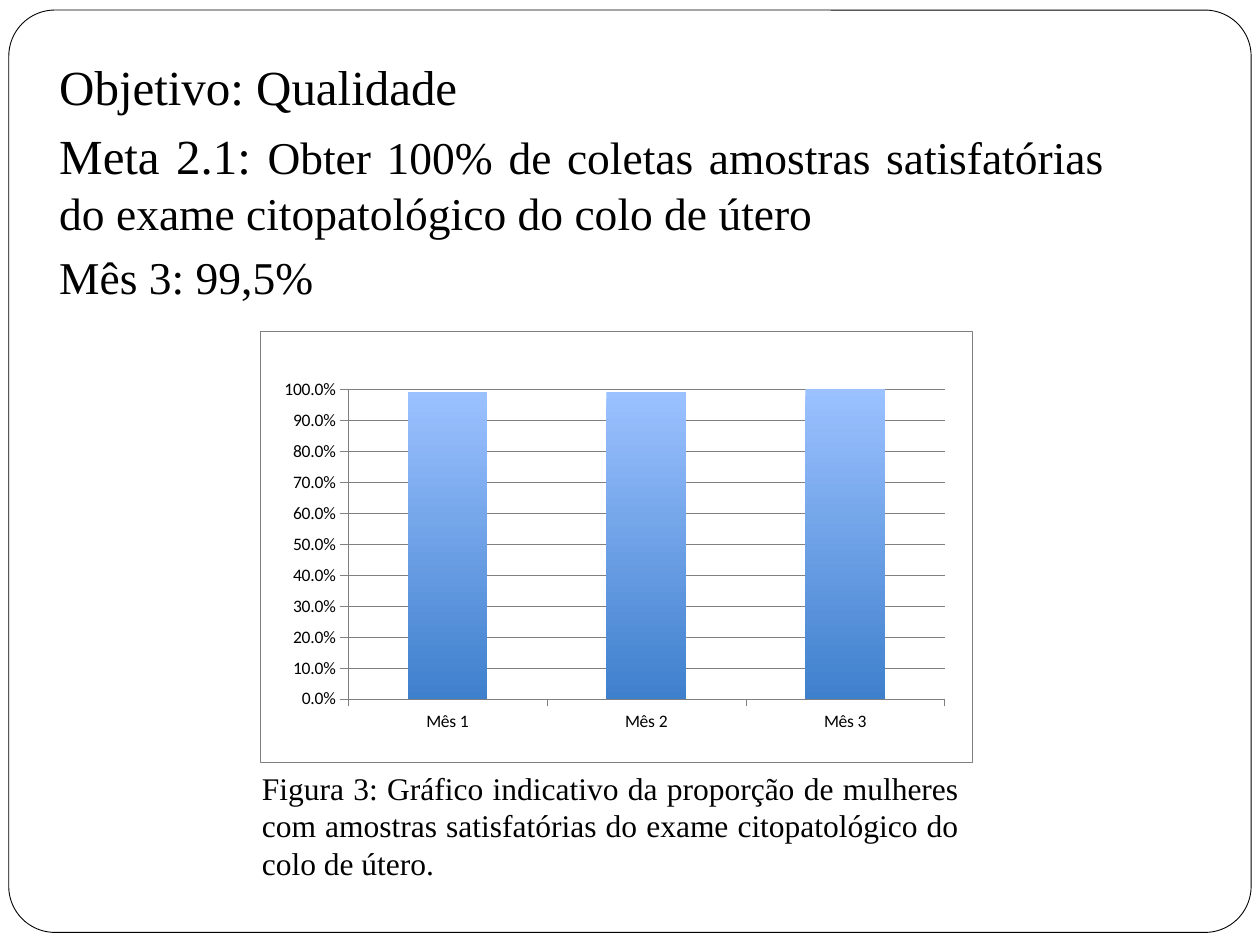
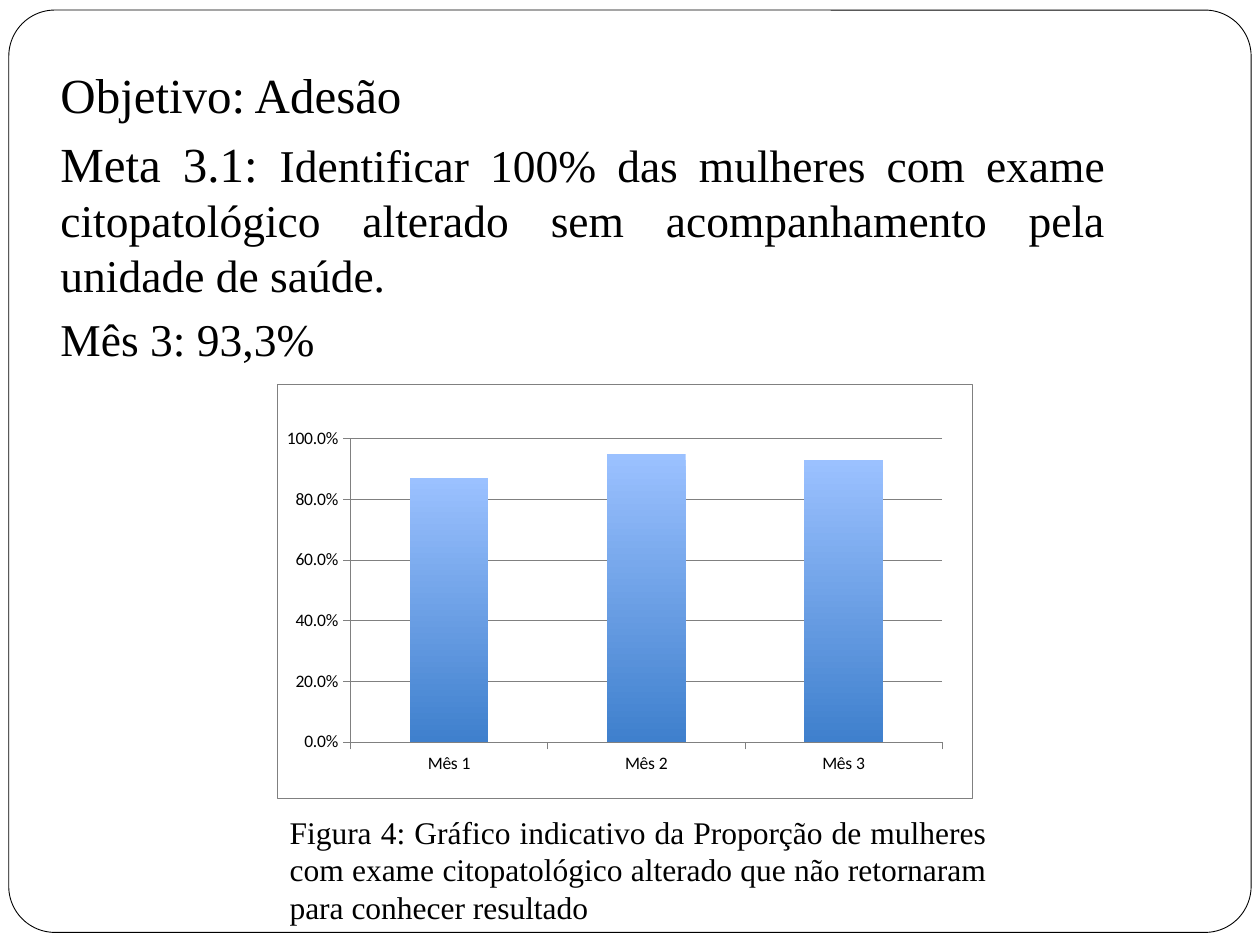
from lxml.etree import SubElement
from pptx import Presentation
from pptx.chart.data import CategoryChartData
from pptx.dml.color import RGBColor
from pptx.enum.chart import XL_CHART_TYPE, XL_TICK_MARK
from pptx.enum.shapes import MSO_SHAPE
from pptx.enum.text import MSO_ANCHOR, MSO_AUTO_SIZE, PP_ALIGN
from pptx.oxml import parse_xml
from pptx.oxml.ns import nsdecls, qn
from pptx.util import Inches, Pt

COLORS = {
    "paper": "FFFFFF",
    "ink": "000000",
    "axis": "808080",
    "bar_top": "9BC1FF",
    "bar_bottom": "3F80CD",
}
TEXT_FONT = "Times New Roman"
CHART_FONT = "Calibri"
MONTHS = ["Mês 1", "Mês 2", "Mês 3"]
PERCENT = "0.0%"

FRAME_BOX = (0.07, 0.08, 9.86, 7.32)
BODY_FRAME = {
    "word_wrap": True,
    "auto_size": MSO_AUTO_SIZE.NONE,
    "vertical_anchor": MSO_ANCHOR.TOP,
}
CAPTION_FRAME = {"word_wrap": True, "auto_size": MSO_AUTO_SIZE.NONE}
BODY_PARAGRAPH = {
    "alignment": PP_ALIGN.JUSTIFY,
    "space_before": Pt(5.8),
    "line_spacing": 1.0,
}
CAPTION_PARAGRAPH = {"alignment": PP_ALIGN.JUSTIFY}

INDICATORS = [
    {
        "body_box": (0.37, 0.4, 8.5, 5),
        "paragraphs": [
            [("Objetivo: Qualidade", 28)],
            [
                ("Meta 2.1: ", 28),
                ("Obter 100% de coletas amostras satisfatórias do exame "
                 "citopatológico do colo de útero", 26),
            ],
            [("Mês 3: 99,5%", 26)],
        ],
        "chart_box": (2.06, 2.63, 5.66, 3.42),
        "plot_box": (0.7, 0.46, 4.74, 2.46),
        "values": (0.99, 0.99, 1),
        "major_unit": 0.1,
        "caption_box": (1.98, 6.05, 5.73, 1.31),
        "caption": "Figura 3: Gráfico indicativo da proporção de mulheres com "
                   "amostras satisfatórias do exame citopatológico do colo de útero.",
    },
    {
        "body_box": (0.38, 0.46, 8.5, 5),
        "paragraphs": [
            [("Objetivo: Adesão", 28)],
            [
                ("Meta 3.1: ", 28),
                ("Identificar 100% das mulheres com exame citopatológico "
                 "alterado sem acompanhamento pela unidade de saúde.", 26),
            ],
            [("Mês 3: 93,3%", 26)],
        ],
        "chart_box": (2.2, 3.05, 5.52, 3.29),
        "plot_box": (0.58, 0.43, 4.7, 2.41),
        "values": (0.87, 0.95, 0.93),
        "major_unit": 0.2,
        "caption_box": (2.2, 6.4, 5.73, 1.01),
        "caption": "Figura 4: Gráfico indicativo da Proporção de mulheres com "
                   "exame citopatológico alterado que não retornaram para "
                   "conhecer resultado",
    },
]


def color(name):
    return RGBColor.from_string(COLORS[name])


def inches(box):
    return [Inches(length) for length in box]


def apply_format(target, values):
    for name, value in values.items():
        setattr(target, name, value)


def format_font(font, name, size):
    apply_format(font, {"name": name, "size": Pt(size)})
    font.color.rgb = color("ink")


def format_line(line, name, width):
    line.color.rgb = color(name)
    line.width = Pt(width)


def add_frame(slide):
    frame = slide.shapes.add_shape(MSO_SHAPE.ROUNDED_RECTANGLE, *inches(FRAME_BOX))
    frame.adjustments[0] = 0.05
    frame.shadow.inherit = False
    frame.fill.solid()
    frame.fill.fore_color.rgb = color("paper")
    format_line(frame.line, "ink", 0.5)
    return frame


def move_to_layout(shape, layout):
    layout.shapes.element.insert(2, shape.element)


def add_run(paragraph, text, size):
    run = paragraph.add_run()
    run.text = text
    format_font(run.font, TEXT_FONT, size)


def remove_bullet(paragraph):
    properties = paragraph._p.get_or_add_pPr()
    properties.set("marL", "0")
    properties.set("indent", "0")
    SubElement(properties, qn("a:buNone"))


def fill_body(slide, box, paragraphs):
    body = slide.placeholders[1]
    apply_format(body, dict(zip(("left", "top", "width", "height"), inches(box))))
    text_frame = body.text_frame
    apply_format(text_frame, BODY_FRAME)
    for index, runs in enumerate(paragraphs):
        paragraph = text_frame.add_paragraph() if index else text_frame.paragraphs[0]
        apply_format(paragraph, BODY_PARAGRAPH)
        remove_bullet(paragraph)
        for text, size in runs:
            add_run(paragraph, text, size)


def add_caption(slide, box, text):
    text_frame = slide.shapes.add_textbox(*inches(box)).text_frame
    apply_format(text_frame, CAPTION_FRAME)
    paragraph = text_frame.paragraphs[0]
    apply_format(paragraph, CAPTION_PARAGRAPH)
    add_run(paragraph, text, 18)


def area_properties(line):
    return parse_xml(
        f'<c:spPr {nsdecls("c", "a")}><a:solidFill>'
        f'<a:srgbClr val="{COLORS["paper"]}"/></a:solidFill>{line}</c:spPr>'
    )


def format_areas(chart, chart_box, plot_box):
    chart_element = chart.element.find(qn("c:chart"))
    border = (
        f'<a:ln w="{Pt(0.25)}"><a:solidFill>'
        f'<a:srgbClr val="{COLORS["axis"]}"/></a:solidFill></a:ln>'
    )
    chart_element.addnext(area_properties(border))
    plot_area = chart_element.find(qn("c:plotArea"))
    plot_area.append(area_properties("<a:ln><a:noFill/></a:ln>"))
    for layout in plot_area.findall(qn("c:layout")):
        plot_area.remove(layout)
    chart_size = chart_box[2:] * 2
    shares = [length / whole for length, whole in zip(plot_box, chart_size)]
    settings = [("layoutTarget", "inner"), ("xMode", "edge"), ("yMode", "edge")]
    settings += zip("xywh", shares)
    entries = "".join(f'<c:{name} val="{value}"/>' for name, value in settings)
    plot_area.insert(0, parse_xml(
        f'<c:layout {nsdecls("c")}><c:manualLayout>{entries}</c:manualLayout></c:layout>'
    ))


def format_axes(chart, major_unit):
    for axis in (chart.category_axis, chart.value_axis):
        axis.major_tick_mark = XL_TICK_MARK.OUTSIDE
        axis.minor_tick_mark = XL_TICK_MARK.NONE
        format_line(axis.format.line, "axis", 0.25)
        format_font(axis.tick_labels.font, CHART_FONT, 10)
    value_axis = chart.value_axis
    apply_format(value_axis, {
        "minimum_scale": 0,
        "maximum_scale": 1,
        "major_unit": major_unit,
        "has_major_gridlines": True,
    })
    format_line(value_axis.major_gridlines.format.line, "axis", 0.25)
    apply_format(value_axis.tick_labels, {
        "number_format": PERCENT,
        "number_format_is_linked": False,
    })


def format_bars(plot):
    apply_format(plot, {"gap_width": 150, "vary_by_categories": False})
    series = plot.series[0]
    series.invert_if_negative = False
    fill = series.format.fill
    fill.gradient()
    fill.gradient_angle = 270
    for position, (stop, name) in enumerate(zip(fill.gradient_stops, ("bar_top", "bar_bottom"))):
        stop.position = position
        stop.color.rgb = color(name)


def add_month_chart(slide, box, plot_box, values, major_unit):
    data = CategoryChartData(number_format=PERCENT)
    data.categories = MONTHS
    data.add_series("Series 1", values)
    chart = slide.shapes.add_chart(XL_CHART_TYPE.COLUMN_CLUSTERED, *inches(box), data).chart
    apply_format(chart, {"has_title": False, "has_legend": False})
    format_font(chart.font, CHART_FONT, 10)
    format_axes(chart, major_unit)
    format_bars(chart.plots[0])
    format_areas(chart, box, plot_box)


def add_indicator_slide(presentation, layout, indicator):
    slide = presentation.slides.add_slide(layout)
    title = slide.shapes.title.element
    title.getparent().remove(title)
    fill_body(slide, indicator["body_box"], indicator["paragraphs"])
    add_caption(slide, indicator["caption_box"], indicator["caption"])
    add_month_chart(
        slide,
        indicator["chart_box"],
        indicator["plot_box"],
        indicator["values"],
        indicator["major_unit"],
    )
    return slide


def main():
    presentation = Presentation()
    presentation.slide_width = Inches(10)
    presentation.slide_height = Inches(7.5)
    layout = presentation.slide_layouts[1]
    slides = [add_indicator_slide(presentation, layout, item) for item in INDICATORS]
    move_to_layout(add_frame(slides[0]), layout)
    presentation.save("out.pptx")


if __name__ == "__main__":
    main()
